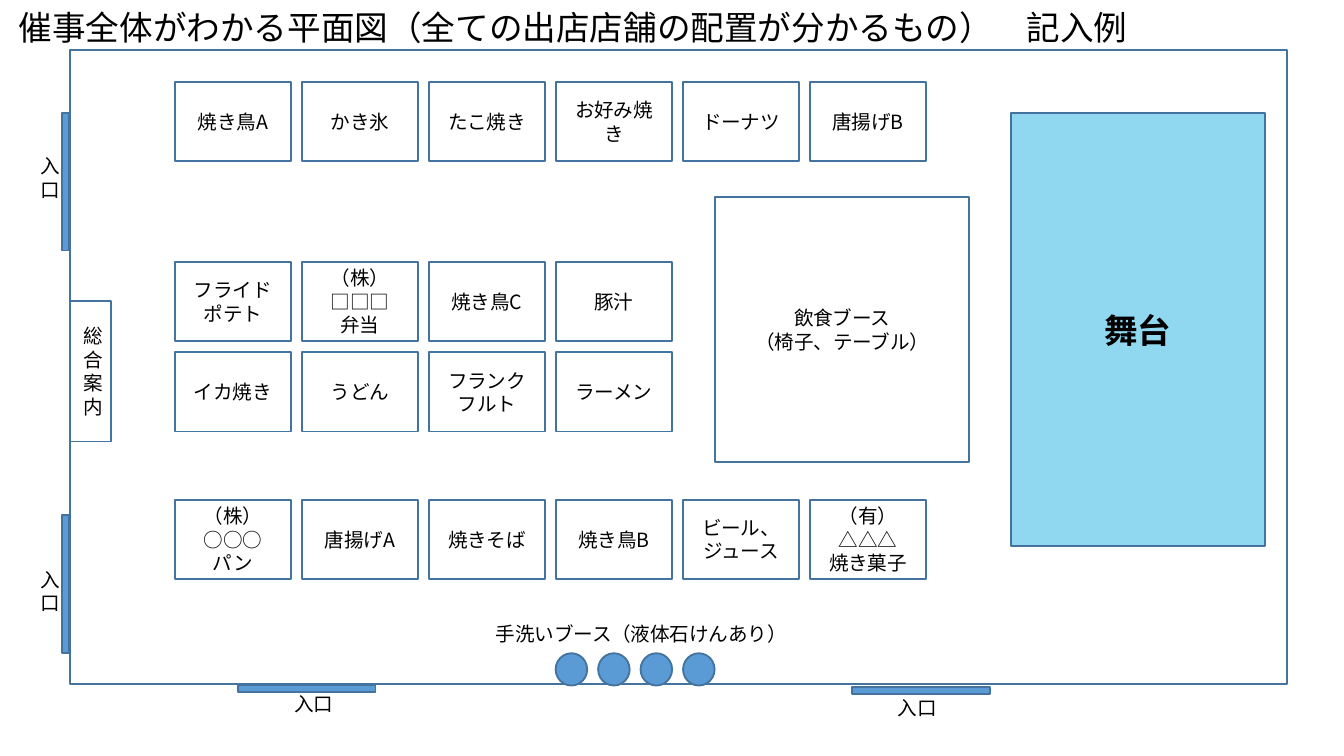
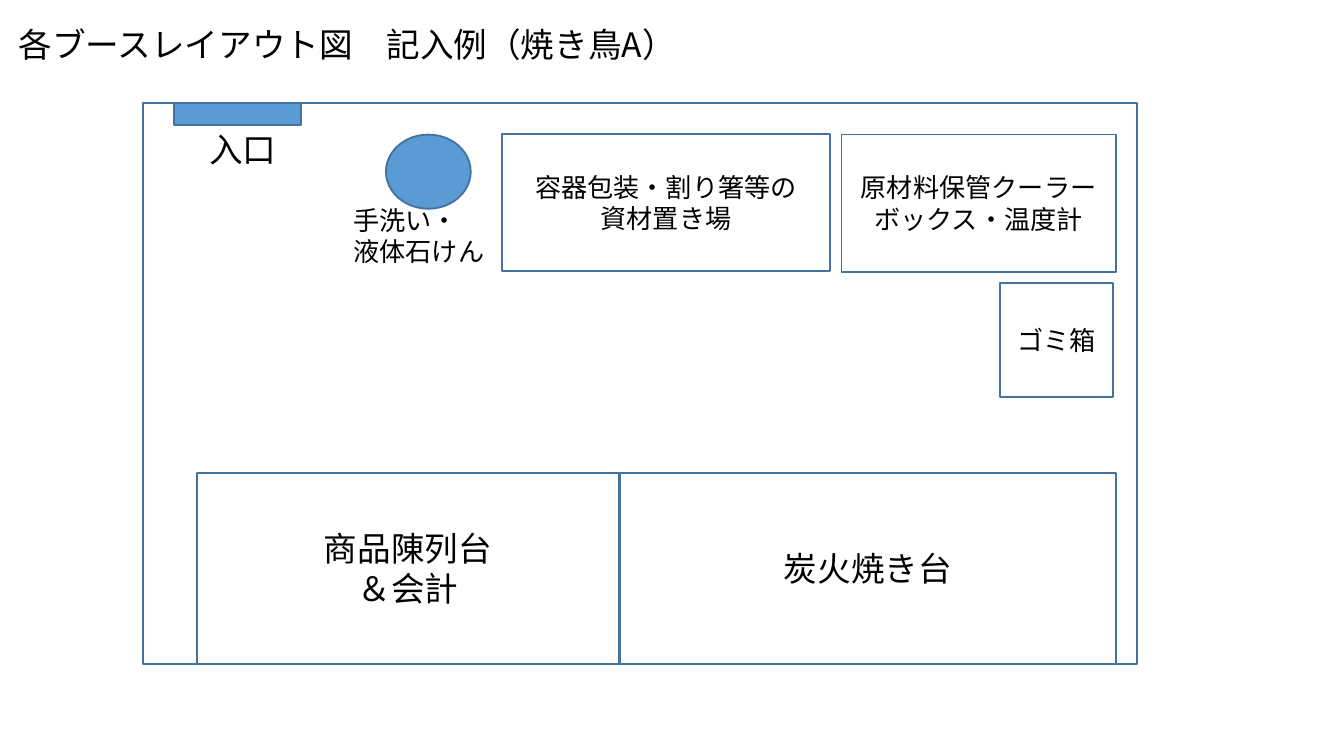
from lxml import etree
from pptx import Presentation
from pptx.dml.color import RGBColor
from pptx.enum.shapes import MSO_SHAPE
from pptx.enum.text import MSO_ANCHOR, MSO_AUTO_SIZE, PP_ALIGN
from pptx.oxml.ns import qn
from pptx.util import Pt

RECT = MSO_SHAPE.RECTANGLE
ROUND = MSO_SHAPE.FLOWCHART_CONNECTOR
CENTER = PP_ALIGN.CENTER
MIDDLE = MSO_ANCHOR.MIDDLE
GROW = MSO_AUTO_SIZE.SHAPE_TO_FIT_TEXT

FONT = "Noto Sans CJK JP"
COLORS = {"line": "43739E", "blue": "5B9BD5", "stage": "90D7F0", "text": "000000"}
BIG, MID, SMALL = 18, 14, 10.5

# Slide 1: the whole event. Places are left, top, width, height.
HALL_TITLE = ("催事全体がわかる平面図（全ての出店店舗の配置が分かるもの）　記入例", (2.9, 0, 634.3, 28.8))
HALL = (37.4, 26.7, 652.3, 339.8)
STAGE = ("舞台", (541.4, 60.6, 136.1, 232))
STALLS = [
    (43.9, ["焼き鳥A", "かき氷", "たこ焼き", "お好み焼き", "ドーナツ", "唐揚げB"]),
    (140.3, ["フライドポテト", "（株）□□□\n弁当", "焼き鳥C", "豚汁"]),
    (188.7, ["イカ焼き", "うどん", "フランクフルト", "ラーメン"]),
    (267.7, ["（株）○○○\nパン", "唐揚げA", "焼きそば", "焼き鳥B", "ビール、ジュース",
             "（有）△△△\n焼き菓子"]),
]
STALL_LEFT, STALL_STEP, STALL_W, STALL_H = 93.7, 68.05, 62.2, 42.5
AREAS = [
    ("飲食ブース\n（椅子、テーブル）", (383.1, 105.6, 136.3, 142)),
    ("総合案内", (37.4, 161.3, 22.2, 75.3)),
]
DOOR_W, DOOR_H = 73.7, 3.8
DOORS = [(456.5, 367.9, 0), (127.5, 367, 0), (-1.9, 95.5, 90), (-1.9, 311, 90)]
SINKS, SINK_LEFT, SINK_STEP = 4, 297.7, 22.75
SINK_TOP, SINK_W, SINK_H = 350, 16.9, 17.3
HALL_NOTES = [
    ("手洗いブース（液体石けんあり）", (258.5, 329.8, 175.7, 20)),
    ("入口", (14.4, 79.2, 28.8, 32.7)),
    ("入口", (14.4, 300.5, 28.8, 32.7)),
    ("入口", (150.7, 367.2, 44.6, 20)),
    ("入口", (473.8, 369.5, 44.6, 20)),
]

# Slide 2: one booth
BOOTH_TITLE = ("各ブースレイアウト図　記入例（焼き鳥A）", (2.9, 9.4, 437, 28.8))
BOOTH = (76.6, 55.2, 532.8, 300.4)
PARTS = [
    ("炭火焼き台", (332, 253.4, 265.8, 102.2), BIG),
    ("商品陳列台\n＆会計", (105.4, 253.4, 226.2, 102.2), BIG),
    ("原材料保管クーラーボックス・温度計", (450.8, 72.1, 147, 73.6), MID),
    ("容器包装・割り箸等の\n資材置き場", (269, 71.8, 175.7, 73.6), MID),
    ("ゴミ箱", (535.6, 151.4, 60.7, 61.3), MID),
]
BOOTH_DOOR = (93.2, 55.2, 68, 11.8)
BOOTH_SINK = (206.8, 72.1, 45.4, 39.7)
BOOTH_NOTES = [
    ("入口", (105.1, 65.5, 79.2, 28.8), BIG),
    ("手洗い・\n液体石けん", (182.2, 105.8, 98.6, 41), MID),
]


def color(name):
    return RGBColor.from_string(COLORS[name])


def write(frame, text, size, bold=False, align=None):
    """Fill a text frame, one paragraph for each line of the text."""
    frame.word_wrap = True
    for i, line in enumerate(text.split("\n")):
        para = frame.paragraphs[0] if i == 0 else frame.add_paragraph()
        para.alignment = align
        run = para.add_run()
        run.text = line
        font = run.font
        font.size, font.name = Pt(size), FONT
        if bold:
            font.bold = True
        font.color.rgb = color("text")
        east = etree.SubElement(run._r.get_or_add_rPr(), qn("a:ea"))
        east.set("typeface", FONT)


def draw(slide, place, text="", size=SMALL, fill=None, kind=RECT, bold=False):
    shape = slide.shapes.add_shape(kind, *map(Pt, place))
    shape.shadow.inherit = False
    if fill:
        shape.fill.solid()
        shape.fill.fore_color.rgb = color(fill)
    else:
        shape.fill.background()
    shape.line.color.rgb = color("line")
    shape.line.width = Pt(1)
    if text:
        shape.text_frame.vertical_anchor = MIDDLE
        write(shape.text_frame, text, size, bold, CENTER)
    return shape


def note(slide, text, place, size=SMALL):
    frame = slide.shapes.add_textbox(*map(Pt, place)).text_frame
    frame.auto_size = GROW
    write(frame, text, size)


def hall(slide):
    draw(slide, HALL)
    text, place = STAGE
    draw(slide, place, text, BIG, "stage", bold=True)
    for left, top, turn in DOORS:
        draw(slide, (left, top, DOOR_W, DOOR_H), fill="blue").rotation = turn
    for top, names in STALLS:
        for i, name in enumerate(names):
            draw(slide, (STALL_LEFT + i * STALL_STEP, top, STALL_W, STALL_H), name)
    for i in range(SINKS):
        place = (SINK_LEFT + i * SINK_STEP, SINK_TOP, SINK_W, SINK_H)
        draw(slide, place, fill="blue", kind=ROUND)
    for text, place in HALL_NOTES:
        note(slide, text, place)
    for text, place in AREAS:
        draw(slide, place, text)
    note(slide, *HALL_TITLE, BIG)


def booth(slide):
    note(slide, *BOOTH_TITLE, BIG)
    draw(slide, BOOTH)
    for text, place, size in PARTS:
        draw(slide, place, text, size)
    draw(slide, BOOTH_DOOR, fill="blue")
    draw(slide, BOOTH_SINK, fill="blue", kind=ROUND)
    for text, place, size in BOOTH_NOTES:
        note(slide, text, place, size)


def main():
    deck = Presentation()
    deck.slide_width, deck.slide_height = Pt(720), Pt(405)
    blank = deck.slide_layouts[6]
    for build in (hall, booth):
        build(deck.slides.add_slide(blank))
    deck.save("out.pptx")


if __name__ == "__main__":
    main()
